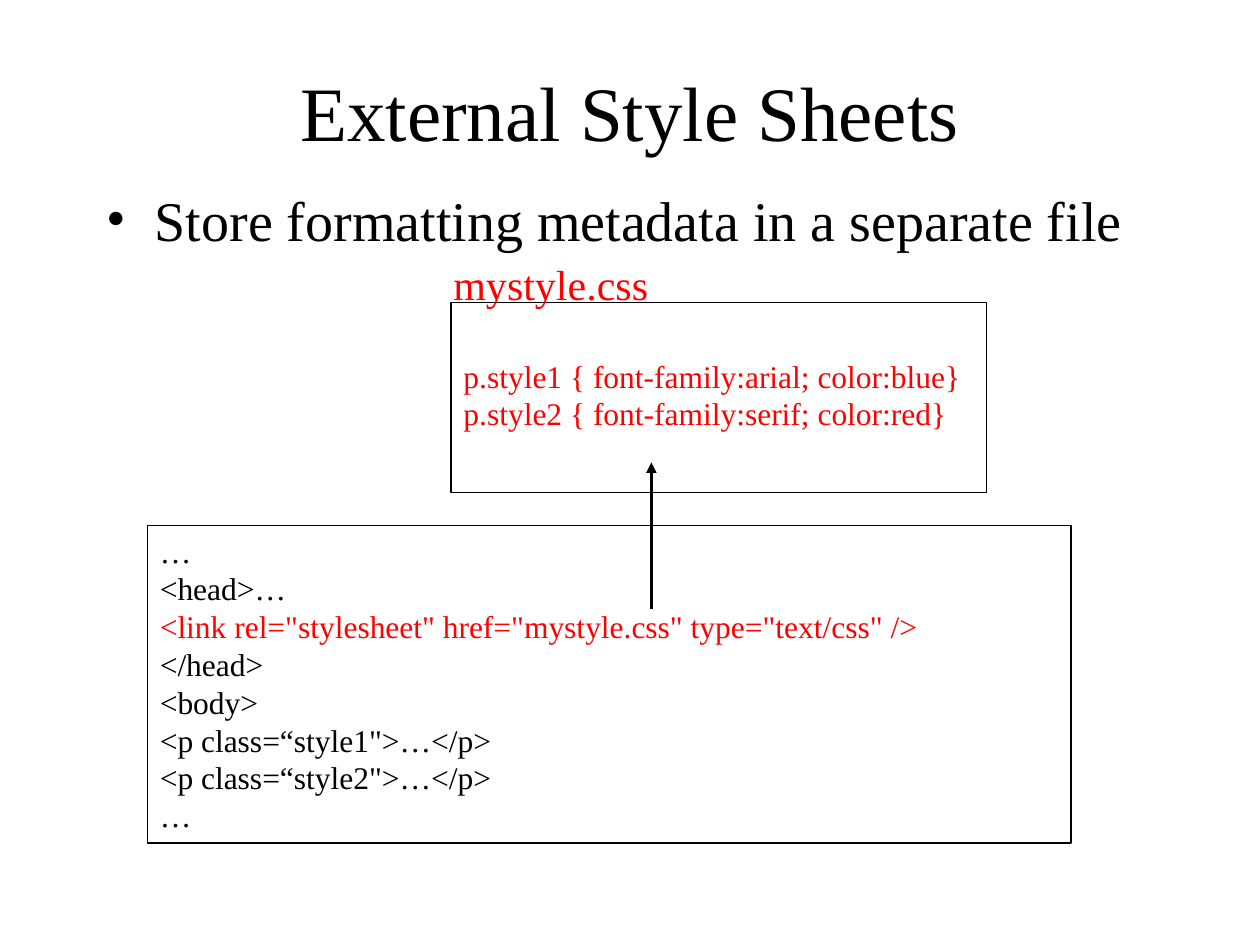
from dataclasses import dataclass

from lxml import etree
from pptx import Presentation
from pptx.dml.color import RGBColor
from pptx.enum import shapes as s, text as t
from pptx.oxml import ns
from pptx.util import Inches, Pt


@dataclass(frozen=True)
class Theme:
    """Colours, font and type sizes of the slide."""
    ink: RGBColor = RGBColor(0, 0, 0)
    accent: RGBColor = RGBColor(255, 0, 0)
    font: str = "Times New Roman"
    title: Pt = Pt(44)
    body: Pt = Pt(32)
    label: Pt = Pt(24)
    code: Pt = Pt(18)
    border: Pt = Pt(0.75)
    arrow: Pt = Pt(2)


THEME = Theme()
PAGE_CODE = [
    "…",
    "<head>…",
    '<link rel="stylesheet" href="mystyle.css" type="text/css" />',
    "</head>",
    "<body>",
    '<p class=“style1">…</p>',
    '<p class=“style2">…</p>',
    "…",
]
STYLE_CODE = [
    "p.style1 { font-family:arial; color:blue}",
    "p.style2 { font-family:serif; color:red}",
]


def apply(target, values):
    """Set each attribute of the target from a dict."""
    for name, value in values.items():
        setattr(target, name, value)


def write_lines(frame, lines, size, colors, align=t.PP_ALIGN.LEFT, **frame_format):
    """Write one paragraph per line, each in its own colour."""
    apply(frame, {"word_wrap": True, "vertical_anchor": t.MSO_ANCHOR.TOP, **frame_format})
    for index, (line, color) in enumerate(zip(lines, colors)):
        paragraph = frame.add_paragraph() if index else frame.paragraphs[0]
        paragraph.alignment = align
        run = paragraph.add_run()
        run.text = line
        apply(run.font, {"name": THEME.font, "size": size})
        run.font.color.rgb = color


def add_text(slide, at, line, size, color, **text_format):
    """Add a one-line text box and return its paragraph."""
    frame = slide.shapes.add_textbox(*map(Inches, at)).text_frame
    write_lines(frame, [line], size, [color], **text_format)
    return frame.paragraphs[0]


def add_bullet(paragraph, indent):
    """Give the paragraph a hanging round bullet."""
    properties = paragraph._p.get_or_add_pPr()
    properties.set("marL", str(indent))
    properties.set("indent", str(-indent))
    etree.SubElement(properties, ns.qn("a:buFont"), typeface=THEME.font)
    etree.SubElement(properties, ns.qn("a:buChar"), char="•")


def add_code_box(slide, at, lines, colors, **frame_format):
    """Add an outlined box holding lines of code."""
    box = slide.shapes.add_shape(s.MSO_SHAPE.RECTANGLE, *map(Inches, at))
    box.shadow.inherit = False
    box.fill.background()
    box.line.color.rgb = THEME.ink
    box.line.width = THEME.border
    write_lines(box.text_frame, lines, THEME.code, colors, **frame_format)


def add_arrow(slide, start, end):
    """Add a straight arrow that points at its end."""
    arrow = slide.shapes.add_connector(
        s.MSO_CONNECTOR.STRAIGHT, *map(Inches, start + end))
    arrow.line.color.rgb = THEME.ink
    arrow.line.width = THEME.arrow
    etree.SubElement(arrow.line._get_or_add_ln(), ns.qn("a:tailEnd"), type="triangle")
    etree.SubElement(arrow._element.spPr, ns.qn("a:effectLst"))


def main():
    """Build the slide on external style sheets."""
    deck = Presentation()
    apply(deck, {"slide_width": Inches(10), "slide_height": Inches(7.5)})
    slide = deck.slides.add_slide(deck.slide_layouts[6])

    add_text(slide, (0.75, 0.25, 8.5, 1.25), "External Style Sheets", THEME.title,
             THEME.ink, align=t.PP_ALIGN.CENTER, vertical_anchor=t.MSO_ANCHOR.MIDDLE)
    point = add_text(slide, (0.75, 1.42, 8.5, 4.5),
                     "Store formatting metadata in a separate file", THEME.body, THEME.ink)
    point.space_before = Pt(6.4)
    add_bullet(point, Inches(0.38))

    page_colors = [THEME.accent if "<link" in line else THEME.ink for line in PAGE_CODE]
    add_code_box(slide, (1.17, 4.17, 7.33, 2.52), PAGE_CODE, page_colors)
    add_code_box(slide, (3.58, 2.4, 4.25, 1.51), STYLE_CODE,
                 [THEME.accent] * len(STYLE_CODE), margin_top=Inches(0.43))
    add_text(slide, (3.5, 2, 1.76, 0.51), "mystyle.css", THEME.label, THEME.accent,
             word_wrap=False)
    add_arrow(slide, (5.17, 4.83), (5.17, 3.67))
    deck.save("out.pptx")


if __name__ == "__main__":
    main()
